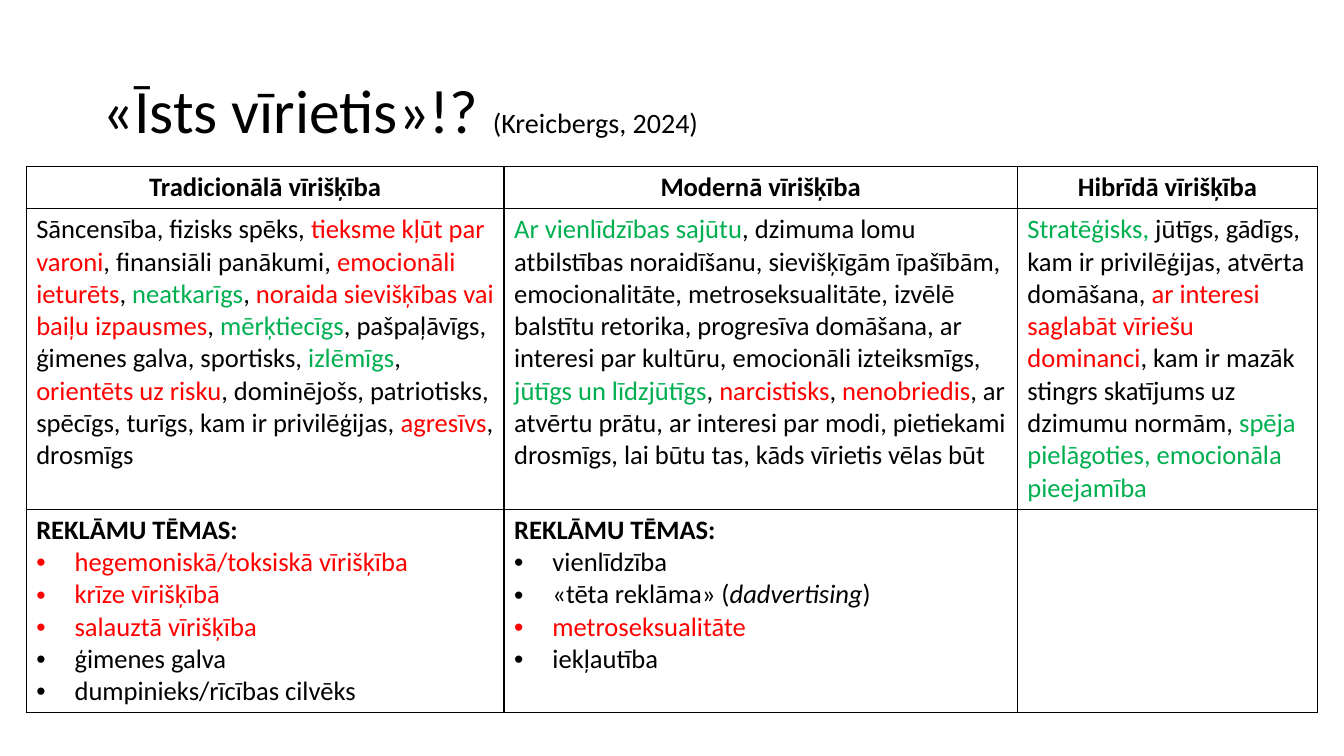
"""Build a slide with a table comparing three kinds of masculinity."""
from dataclasses import dataclass

from lxml import etree
from pptx import Presentation
from pptx.dml.color import RGBColor
from pptx.enum.text import MSO_ANCHOR, MSO_AUTO_SIZE, PP_ALIGN
from pptx.oxml.ns import qn
from pptx.util import Inches, Pt

LEFT, CENTER = PP_ALIGN.LEFT, PP_ALIGN.CENTER
MIDDLE, FIXED = MSO_ANCHOR.MIDDLE, MSO_AUTO_SIZE.NONE


@dataclass(frozen=True)
class Theme:
    """Hold the font, colours and sizes."""
    font: str = "Calibri"
    ink: str = "000000"
    bad: str = "FF0000"
    good: str = "00B050"
    head: int = 44
    cite: int = 20
    body: int = 19
    rule: int = 1
    hang: float = 0.38


THEME = Theme()
RED, GREEN = {"color": THEME.bad}, {"color": THEME.good}
BOLD, SLANT, PLAIN = {"bold": True}, {"italic": True}, {}

TITLE = [("«Īsts vīrietis»!? ", {"size": THEME.head}),
         ("(Kreicbergs, 2024)", {"size": THEME.cite})]
HEADS = ["Tradicionālā vīrišķība", "Modernā vīrišķība", "Hibrīdā vīrišķība"]
TRAITS = [
    [("Sāncensība, fizisks spēks, ", PLAIN),
     ("tieksme kļūt par varoni", RED),
     (", finansiāli panākumi, ", PLAIN),
     ("emocionāli ieturēts", RED),
     (", ", PLAIN),
     ("neatkarīgs", GREEN),
     (", ", PLAIN),
     ("noraida sievišķības vai baiļu izpausmes", RED),
     (", ", PLAIN),
     ("mērķtiecīgs", GREEN),
     (", pašpaļāvīgs, ģimenes galva, sportisks, ", PLAIN),
     ("izlēmīgs", GREEN),
     (", ", PLAIN),
     ("orientēts uz risku", RED),
     (", dominējošs, patriotisks, spēcīgs, turīgs, kam ir privilēģijas, ", PLAIN),
     ("agresīvs", RED),
     (", drosmīgs", PLAIN)],
    [("Ar vienlīdzības sajūtu", GREEN),
     (", dzimuma lomu atbilstības noraidīšanu, sievišķīgām īpašībām, "
      "emocionalitāte, metroseksualitāte, izvēlē balstītu retorika, "
      "progresīva domāšana, ar interesi par kultūru, "
      "emocionāli izteiksmīgs, ", PLAIN),
     ("jūtīgs un līdzjūtīgs", GREEN),
     (", ", PLAIN),
     ("narcistisks", RED),
     (", ", PLAIN),
     ("nenobriedis", RED),
     (", ar atvērtu prātu, ar interesi par modi, pietiekami drosmīgs, "
      "lai būtu tas, kāds vīrietis vēlas būt", PLAIN)],
    [("Stratēģisks, ", GREEN),
     ("jūtīgs, gādīgs, kam ir privilēģijas, atvērta domāšana, ", PLAIN),
     ("ar interesi saglabāt vīriešu dominanci", RED),
     (", kam ir mazāk stingrs skatījums uz dzimumu normām, ", PLAIN),
     ("spēja pielāgoties, emocionāla pieejamība", GREEN)],
]
LABEL = [("REKLĀMU TĒMAS:", BOLD)]
TOPICS = [
    [LABEL,
     [("hegemoniskā/toksiskā vīrišķība", RED)],
     [("krīze vīrišķībā", RED)],
     [("salauztā vīrišķība", RED)],
     [("ģimenes galva", PLAIN)],
     [("dumpinieks/rīcības cilvēks", PLAIN)]],
    [LABEL,
     [("vienlīdzība", PLAIN)],
     [("«tēta reklāma» (", PLAIN), ("dadvertising", SLANT), (")", PLAIN)],
     [("metroseksualitāte", RED)],
     [("iekļautība", PLAIN)]],
    [],
]
GRID = [[[[(head, BOLD)]] for head in HEADS],
        [[trait] for trait in TRAITS],
        TOPICS]


class Deck:
    """Draw styled elements on the current slide."""

    def __init__(self, theme):
        """Start a deck with one title-only slide."""
        self.theme = theme
        self.prs = Presentation()
        self.prs.slide_width, self.prs.slide_height = Inches(13.33), Inches(7.5)
        self.slide = self.prs.slides.add_slide(self.prs.slide_layouts[5])

    def runs(self, para, parts):
        """Write styled runs into a paragraph."""
        for text, style in parts:
            run = para.add_run()
            run.text = text
            look = {"name": self.theme.font, "size": self.theme.body,
                    "color": self.theme.ink, "bold": False,
                    "italic": False} | style
            run.font.color.rgb = RGBColor.from_string(look.pop("color"))
            look["size"] = Pt(look["size"])
            for key, value in look.items():
                setattr(run.font, key, value)

    def title(self, parts, box):
        """Place and fill the title."""
        shape = self.slide.shapes.title
        for key, value in zip(("left", "top", "width", "height"), box):
            setattr(shape, key, Inches(value))
        frame = shape.text_frame
        look = {"vertical_anchor": MIDDLE, "auto_size": FIXED, "word_wrap": True}
        for key, value in look.items():
            setattr(frame, key, value)
        para = frame.paragraphs[0]
        para.alignment, para.line_spacing = LEFT, 0.9
        self.runs(para, parts)

    def bullet(self, para):
        """Give a paragraph a hanging bullet."""
        props = para._p.get_or_add_pPr()
        hang = Inches(self.theme.hang)
        props.set("marL", str(hang))
        props.set("indent", str(-hang))
        font = etree.SubElement(props, qn("a:buFont"))
        font.set("typeface", "Arial")
        etree.SubElement(props, qn("a:buChar")).set("char", "•")

    def border(self, cell):
        """Rule all four sides of a cell."""
        props = cell._tc.get_or_add_tcPr()
        for side in ("lnL", "lnR", "lnT", "lnB"):
            line = etree.SubElement(props, qn(f"a:{side}"))
            line.set("w", str(Pt(self.theme.rule)))
            fill = etree.SubElement(line, qn("a:solidFill"))
            etree.SubElement(fill, qn("a:srgbClr")).set("val", self.theme.ink)

    def cell(self, cell, paras, align):
        """Fill one cell, with bullets after the first paragraph."""
        self.border(cell)
        cell.fill.background()
        frame = cell.text_frame
        for i, parts in enumerate(paras):
            para = frame.add_paragraph() if i else frame.paragraphs[0]
            para.alignment = align
            if i:
                self.bullet(para)
            self.runs(para, parts)

    def table(self, grid, spot, cols, rows):
        """Add a plain ruled table."""
        box = [Inches(n) for n in (*spot, sum(cols), sum(rows))]
        table = self.slide.shapes.add_table(len(rows), len(cols), *box).table
        table.first_row = table.horz_banding = False
        for col, width in zip(table.columns, cols):
            col.width = Inches(width)
        for r, (row, high) in enumerate(zip(table.rows, rows)):
            row.height = Inches(high)
            for c, paras in enumerate(grid[r]):
                self.cell(table.cell(r, c), paras, LEFT if r else CENTER)


def main():
    """Build and save the slide."""
    deck = Deck(THEME)
    deck.title(TITLE, (0.92, 0.4, 11.5, 1.45))
    deck.table(GRID, (0.26, 1.65), (4.74, 5.09, 2.98), (0.42, 2.98, 2.02))
    deck.prs.save("out.pptx")


if __name__ == "__main__":
    main()
